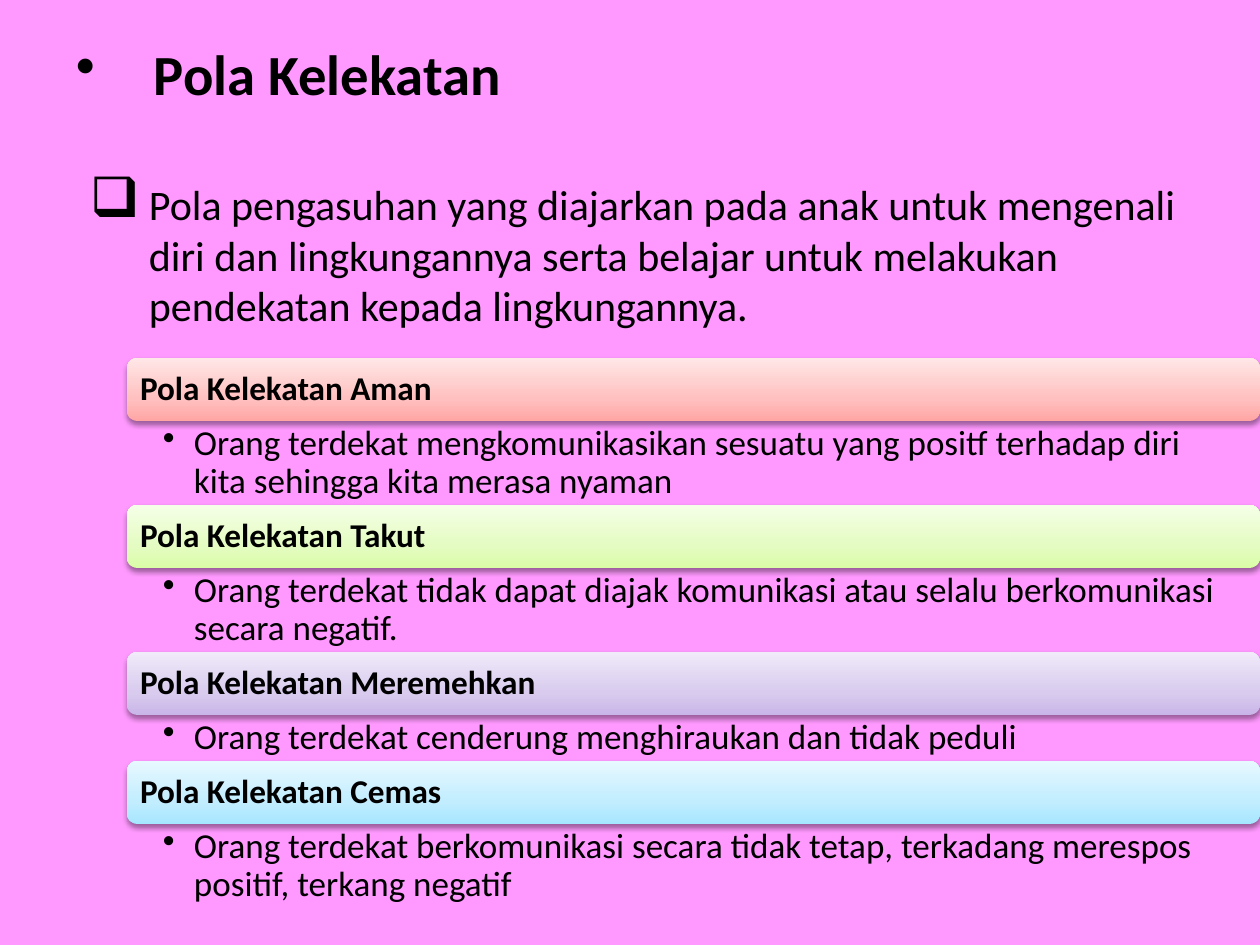
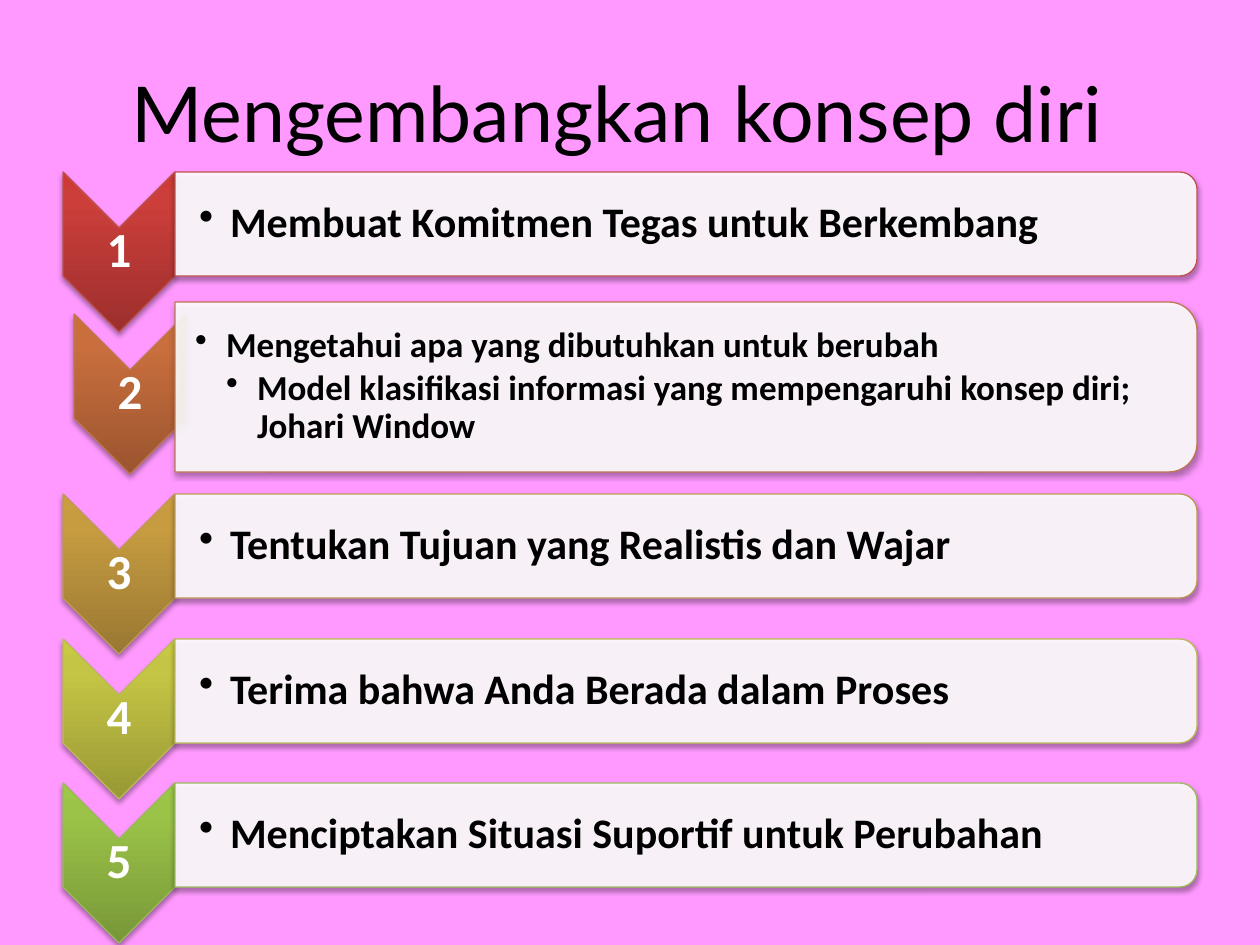
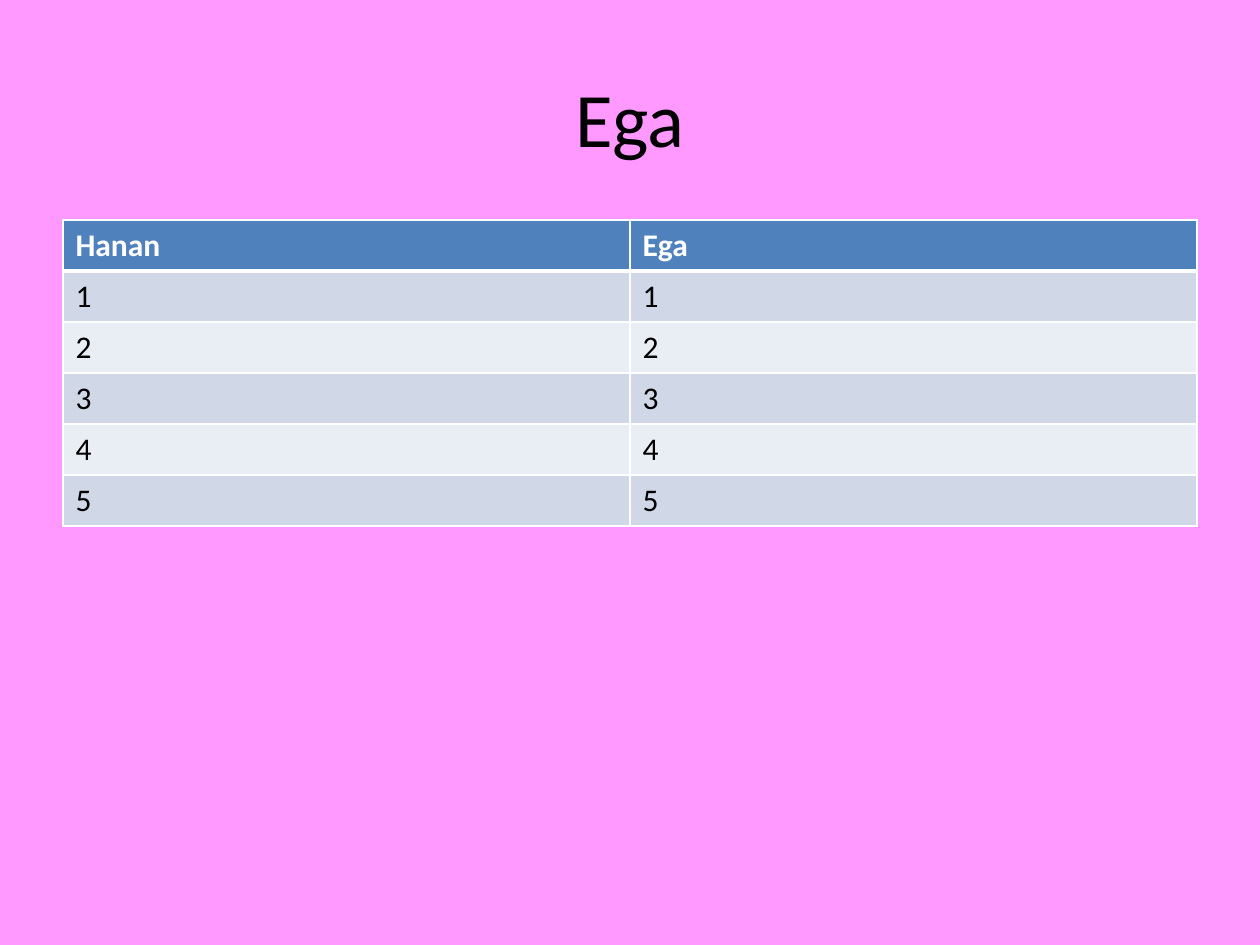
import pptx
import pptx.util
import pptx.dml.color
import pptx.enum.shapes
import pptx.enum.text
import pptx.oxml
import pptx.oxml.ns

Pt = pptx.util.Pt
RGBColor = pptx.dml.color.RGBColor
MSO_SHAPE = pptx.enum.shapes.MSO_SHAPE
ANCHOR = pptx.enum.text.MSO_ANCHOR
ALIGN = pptx.enum.text.PP_ALIGN
qn = pptx.oxml.ns.qn
NS = pptx.oxml.ns.nsdecls("a")

PX_PER_INCH = 126
SLIDE_W, SLIDE_H = 1260, 945
FONT = "Calibri"
TITLE_FONT = "Lato"

PINK = RGBColor(0xFF, 0x99, 0xFF)
BLACK = RGBColor(0, 0, 0)
WHITE = RGBColor(0xFF, 0xFF, 0xFF)
HEADER_BLUE = RGBColor(0x4F, 0x81, 0xBD)
ROW_DARK = RGBColor(0xD0, 0xD8, 0xE8)
ROW_LIGHT = RGBColor(0xE9, 0xED, 0xF4)

RED_TINTS = RGBColor(0xFF, 0xA6, 0xA5), RGBColor(0xFF, 0xC0, 0xBF), RGBColor(0xFF, 0xE7, 0xE7)
GREEN_TINTS = RGBColor(0xDA, 0xFD, 0xA7), RGBColor(0xE4, 0xFC, 0xC2), RGBColor(0xF5, 0xFF, 0xE7)
PURPLE_TINTS = RGBColor(0xC9, 0xB5, 0xE8), RGBColor(0xD8, 0xCB, 0xEE), RGBColor(0xF0, 0xEA, 0xF9)
BLUE_TINTS = RGBColor(0xA7, 0xE6, 0xFF), RGBColor(0xC1, 0xED, 0xFF), RGBColor(0xE7, 0xF8, 0xFF)

RED_SHADES = RGBColor(0x9C, 0x2F, 0x2D), RGBColor(0xCB, 0x3E, 0x3A), RGBColor(0xCE, 0x3B, 0x37)
ORANGE_SHADES = RGBColor(0x9B, 0x55, 0x2F), RGBColor(0xC9, 0x6E, 0x3D), RGBColor(0xCD, 0x6E, 0x3B)
GOLD_SHADES = RGBColor(0x99, 0x78, 0x32), RGBColor(0xC7, 0x9C, 0x41), RGBColor(0xCB, 0x9D, 0x3F)
OLIVE_SHADES = RGBColor(0x98, 0x98, 0x35), RGBColor(0xC5, 0xC5, 0x45), RGBColor(0xC8, 0xC9, 0x42)
LEAF_SHADES = RGBColor(0x77, 0x97, 0x37), RGBColor(0x9B, 0xC3, 0x48), RGBColor(0x9D, 0xC7, 0x46)
RED_EDGE = RGBColor(0xC0, 0x50, 0x4D)
ORANGE_EDGE = RGBColor(0xBF, 0x77, 0x50)
GOLD_EDGE = RGBColor(0xBD, 0x9B, 0x53)
OLIVE_EDGE = RGBColor(0xBC, 0xBC, 0x56)
LEAF_EDGE = RGBColor(0x9B, 0xBB, 0x59)

PATTERNS = [
    ("Pola Kelekatan Aman", RED_TINTS, 84,
     "Orang terdekat mengkomunikasikan sesuatu yang positf terhadap diri kita sehingga kita merasa nyaman"),
    ("Pola Kelekatan Takut", GREEN_TINTS, 84,
     "Orang terdekat tidak dapat diajak komunikasi atau selalu berkomunikasi secara negatif."),
    ("Pola Kelekatan Meremehkan", PURPLE_TINTS, 46,
     "Orang terdekat cenderung menghiraukan dan tidak peduli"),
    ("Pola Kelekatan Cemas", BLUE_TINTS, 84,
     "Orang terdekat berkomunikasi secara tidak tetap, terkadang merespos positif, terkang negatif"),
]

STEPS = [
    ("Membuat Komitmen Tegas untuk Berkembang", RED_SHADES, RED_EDGE, 172),
    ("Mengetahui apa yang dibutuhkan untuk berubah\n"
     "Model klasifikasi informasi yang mempengaruhi konsep diri; Johari Window",
     ORANGE_SHADES, ORANGE_EDGE, 302),
    ("Tentukan Tujuan yang Realistis dan Wajar", GOLD_SHADES, GOLD_EDGE, 494),
    ("Terima bahwa Anda Berada dalam Proses", OLIVE_SHADES, OLIVE_EDGE, 639),
    ("Menciptakan Situasi Suportif untuk Perubahan", LEAF_SHADES, LEAF_EDGE, 783),
]


def px(length):
    return round(length * 914400 / PX_PER_INCH)


def add_text(slide, text, box, size=20, font=FONT, color=BLACK, bold=False, align=ALIGN.LEFT,
             anchor=ANCHOR.TOP, insets=(13, 6, 13, 6), bullet=None, bullet_scale=100,
             margin=0, hang=0, line_spacing=1.0, gap=0):
    frame = slide.shapes.add_textbox(*map(px, box)).text_frame
    frame.word_wrap = True
    frame.vertical_anchor = anchor
    frame.margin_left, frame.margin_top, frame.margin_right, frame.margin_bottom = map(px, insets)
    for level, line in enumerate(text.split("\n")):
        paragraph = frame.paragraphs[0] if level == 0 else frame.add_paragraph()
        paragraph.alignment = align
        paragraph.line_spacing = line_spacing
        paragraph.space_after = Pt(gap)
        if bullet:
            props = paragraph._p.get_or_add_pPr()
            props.set("marL", str(px(margin + level * hang)))
            props.set("indent", str(px(-hang)))
            props.append(pptx.oxml.parse_xml(f'<a:buSzPct {NS} val="{bullet_scale * 1000}"/>'))
            props.append(pptx.oxml.parse_xml(f'<a:buChar {NS} char="{bullet}"/>'))
        run = paragraph.add_run()
        run.text = line
        run.font.size = Pt(size)
        run.font.name = font
        run.font.bold = bold
        run.font.color.rgb = color


def add_panel(slide, kind, box, turned=False, shadow_alpha=35, shadow_distance=1.8):
    left, top, width, height = box
    if turned:
        shift = (width - height) / 2
        left, top, width, height = left + shift, top - shift, height, width
    panel = slide.shapes.add_shape(kind, px(left), px(top), px(width), px(height))
    panel.rotation = 90 if turned else 0
    panel.shadow.inherit = False
    panel.line.fill.background()
    panel._element.spPr.find(qn("a:effectLst")).append(pptx.oxml.parse_xml(
        f'<a:outerShdw {NS} blurRad="{Pt(3.1)}" dist="{Pt(shadow_distance)}" dir="5400000" rotWithShape="0">'
        f'<a:srgbClr val="000000"><a:alpha val="{shadow_alpha * 1000}"/></a:srgbClr></a:outerShdw>'))
    return panel


def fill_gradient(panel, colors, middle):
    stops = "".join(f'<a:gs pos="{position * 1000}"><a:srgbClr val="{color}"/></a:gs>'
                    for position, color in zip((0, middle, 100), colors))
    panel._element.spPr.find(qn("a:prstGeom")).addnext(pptx.oxml.parse_xml(
        f'<a:gradFill {NS} rotWithShape="0"><a:gsLst>{stops}</a:gsLst>'
        f'<a:lin ang="16200000" scaled="0"/></a:gradFill>'))


def outline(panel, color):
    panel.line.color.rgb = color
    panel.line.width = Pt(0.75)


def add_title(slide, text, box, font=FONT):
    add_text(slide, text, box, size=44, font=font, align=ALIGN.CENTER, anchor=ANCHOR.MIDDLE)


def add_pattern(slide, box, heading, tints, description):
    left, top, width, height = box
    bar_height = 63
    bar = add_panel(slide, MSO_SHAPE.ROUNDED_RECTANGLE, (left, top, width, bar_height),
                    shadow_alpha=38, shadow_distance=1.6)
    fill_gradient(bar, tints, 35)
    add_text(slide, heading, (left + 3, top + 3, width - 6, bar_height - 6), size=19, bold=True,
             anchor=ANCHOR.MIDDLE, insets=(10, 10, 10, 10), line_spacing=0.9)
    add_text(slide, description, (left, top + bar_height, width, height - bar_height),
             insets=(36, 4, 20, 4), bullet="•", margin=31, hang=31, line_spacing=0.9)


def add_step(slide, number, box, text, shades, edge):
    left, top, width, height = box
    detailed = "\n" in text
    chevron_w, chevron_h = 112, 160
    chevron_left = left + 11 if detailed else left
    chevron_top = top + height - chevron_h + 2 if detailed else top
    chevron = add_panel(slide, MSO_SHAPE.CHEVRON, (chevron_left, chevron_top, chevron_w, chevron_h), turned=True)
    fill_gradient(chevron, shades, 80)
    outline(chevron, edge)
    add_text(slide, str(number), (chevron_left, chevron_top + chevron_w // 2, chevron_w, 48), size=28,
             color=WHITE, bold=True, align=ALIGN.CENTER, anchor=ANCHOR.MIDDLE,
             insets=(2, 2, 2, 2), line_spacing=0.9)

    card_left, card_width = left + chevron_w, width - chevron_w
    card = add_panel(slide, MSO_SHAPE.ROUND_2_SAME_RECTANGLE, (card_left, top, card_width, height), turned=True)
    card.fill.solid()
    card.fill.fore_color.rgb = WHITE
    card._element.spPr.find(qn("a:solidFill"))[0].append(pptx.oxml.parse_xml(f'<a:alpha {NS} val="90000"/>'))
    outline(card, edge)
    corner = round(height * 0.05)
    add_text(slide, text, (card_left, top + corner, card_width - corner, height - 2 * corner),
             size=20 if detailed else 24, bold=True, anchor=ANCHOR.MIDDLE,
             insets=(20 if detailed else 24, 2, 2, 2), bullet="•", margin=31, hang=31,
             line_spacing=0.9, gap=3)


def add_borders(cell, widths):
    props = cell._tc.get_or_add_tcPr()
    for side, width in zip("LRTB", widths):
        props.append(pptx.oxml.parse_xml(
            f'<a:ln{side} {NS} w="{Pt(width)}"><a:solidFill><a:srgbClr val="{WHITE}"/></a:solidFill></a:ln{side}>'))


def add_grid(slide, box, rows):
    grid = slide.shapes.add_table(len(rows), len(rows[0]), *map(px, box)).table
    for row_index, row in enumerate(rows):
        header = row_index == 0
        for column_index, value in enumerate(row):
            cell = grid.cell(row_index, column_index)
            add_borders(cell, (1, 1, 3 if row_index == 1 else 1, 3 if header else 1))
            cell.fill.solid()
            cell.fill.fore_color.rgb = HEADER_BLUE if header else (ROW_LIGHT, ROW_DARK)[row_index % 2]
            run = cell.text_frame.paragraphs[0].add_run()
            run.text = value
            run.font.name = FONT
            run.font.size = Pt(18)
            run.font.bold = header
            run.font.color.rgb = WHITE if header else BLACK


def build_patterns(slide):
    add_text(slide, "Pola Kelekatan", (63, 30, 457, 86), size=32.4, bold=True, anchor=ANCHOR.MIDDLE,
             bullet="•", margin=78, hang=78)
    add_text(slide, "Pola pengasuhan yang diajarkan pada anak untuk mengenali diri dan lingkungannya "
             "serta belajar untuk melakukan pendekatan kepada lingkungannya.",
             (14, 160, 1218, 194), size=24, insets=(13, 19, 13, 6),
             bullet="❑", bullet_scale=133, margin=122, hang=59)
    left, top, bar_height = 127, 358, 63
    for heading, tints, description_height, description in PATTERNS:
        height = bar_height + description_height
        add_pattern(slide, (left, top, SLIDE_W - left, height), heading, tints, description)
        top += height


def build_steps(slide):
    add_title(slide, "Mengembangkan konsep diri", (50, 38, 1134, 147), font=TITLE_FONT)
    for number, (text, shades, edge, top) in enumerate(STEPS, 1):
        height = 170 if "\n" in text else 104
        add_step(slide, number, (63, top, 1134, height), text, shades, edge)


def build_comparison(slide):
    add_title(slide, "Ega", (63, 38, 1134, 157))
    rows = [("Hanan", "Ega")] + [(str(n), str(n)) for n in range(1, 6)]
    add_grid(slide, (63, 220, 1134, 306), rows)


def main():
    deck = pptx.Presentation()
    deck.slide_width, deck.slide_height = px(SLIDE_W), px(SLIDE_H)
    backdrop = deck.slide_master.background.fill
    backdrop.solid()
    backdrop.fore_color.rgb = PINK
    for build in (build_patterns, build_steps, build_comparison):
        build(deck.slides.add_slide(deck.slide_layouts[6]))
    deck.save("out.pptx")


if __name__ == "__main__":
    main()
